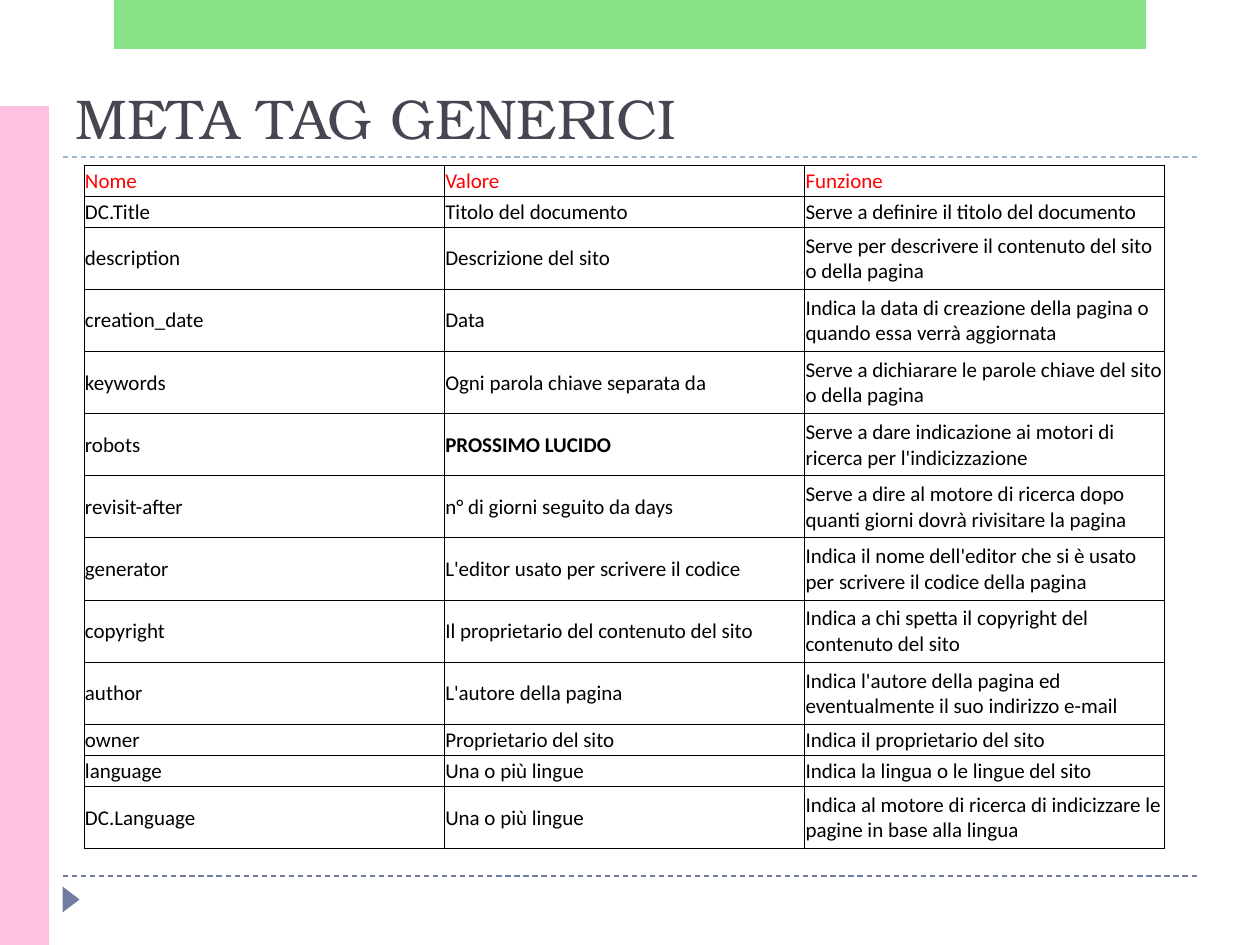
from lxml.etree import SubElement
from pptx import Presentation
from pptx.dml.color import RGBColor
from pptx.enum.dml import MSO_LINE
from pptx.enum.shapes import MSO_CONNECTOR, MSO_SHAPE
from pptx.enum.text import MSO_ANCHOR, PP_ALIGN
from pptx.oxml.ns import qn
from pptx.util import Emu, Pt

TITLE = "META TAG GENERICI"
HEADER = ("Nome", "Valore", "Funzione")
# name, value, purpose, lines of text in the row
TAGS = [
    ("DC.Title", "Titolo del documento", "Serve a definire il titolo del documento", 1),
    ("description", "Descrizione del sito",
     "Serve per descrivere il contenuto del sito o della pagina", 2),
    ("creation_date", "Data",
     "Indica la data di creazione della pagina o quando essa verrà aggiornata", 2),
    ("keywords", "Ogni parola chiave separata da",
     "Serve a dichiarare le parole chiave del sito o della pagina", 2),
    ("robots", "PROSSIMO LUCIDO",
     "Serve a dare indicazione ai motori di ricerca per l'indicizzazione", 2),
    ("revisit-after", "n° di giorni seguito da days",
     "Serve a dire al motore di ricerca dopo quanti giorni dovrà rivisitare la pagina", 2),
    ("generator", "L'editor usato per scrivere il codice",
     "Indica il nome dell'editor che si è usato per scrivere il codice della pagina", 2),
    ("copyright", "Il proprietario del contenuto del sito",
     "Indica a chi spetta il copyright del contenuto del sito", 2),
    ("author", "L'autore della pagina",
     "Indica l'autore della pagina ed eventualmente il suo indirizzo e-mail", 2),
    ("owner", "Proprietario del sito", "Indica il proprietario del sito", 1),
    ("language", "Una o più lingue", "Indica la lingua o le lingue del sito", 1),
    ("DC.Language", "Una o più lingue",
     "Indica al motore di ricerca di indicizzare le pagine in base alla lingua", 2),
]
EMPHASIS = "PROSSIMO LUCIDO"

# shape, box in px, colour, opacity in percent, rotation
DECORATIONS = [
    (MSO_SHAPE.ISOSCELES_TRIANGLE, (58, 891, 26, 17), "727CA3", 100, 90),
    (MSO_SHAPE.RECTANGLE, (0, 106, 49, 839), "FFC1E0", 100, 0),
    (MSO_SHAPE.RECTANGLE, (114, 0, 1032, 49), "62D862", 76, 0),
]
RULES = [(876, "727CA3"), (157, "9FB8CD")]  # y in px, colour
RULE_LEFT, RULE_RIGHT = 63, 1197
TITLE_BOX = (63, 69, 1134, 88)
TABLE_LEFT, TABLE_TOP, TABLE_WIDTH = 84, 165, 1081
LINE_HEIGHT = 31.1


def px(length):
    return Emu(round(length * 914400 / 126))


def rgb(colour):
    return RGBColor.from_string(colour)


def write(frame, text, *, font, size, colour, bold=False, anchor=MSO_ANCHOR.MIDDLE):
    frame.word_wrap = True
    frame.vertical_anchor = anchor
    para = frame.paragraphs[0]
    para.alignment = PP_ALIGN.LEFT
    span = para.add_run()
    span.text = text
    span.font.name = font
    span.font.size = Pt(size)
    span.font.bold = bold
    span.font.color.rgb = rgb(colour)


def add_rule(page, y, colour):
    rule = page.shapes.add_connector(
        MSO_CONNECTOR.STRAIGHT, px(RULE_LEFT), px(y), px(RULE_RIGHT), px(y))
    rule.line.color.rgb = rgb(colour)
    rule.line.width = Pt(0.75)
    rule.line.dash_style = MSO_LINE.DASH
    SubElement(rule._element.spPr, qn("a:effectLst"))


def add_decoration(page, kind, box, colour, opacity, rotation):
    shape = page.shapes.add_shape(kind, *map(px, box))
    shape.shadow.inherit = False
    shape.rotation = rotation
    shape.fill.solid()
    shape.fill.fore_color.rgb = rgb(colour)
    shape.line.fill.background()
    if opacity < 100:
        tint = shape._element.spPr.find(qn("a:solidFill"))[0]
        SubElement(tint, qn("a:alpha"), val=str(opacity * 1000))


def border(cell):
    """Draw the four edges; they must precede the fill in the cell properties."""
    props = cell._tc.get_or_add_tcPr()
    for side in ("lnL", "lnR", "lnT", "lnB"):
        edge = SubElement(props, qn("a:" + side), w=str(Pt(0.5)))
        SubElement(SubElement(edge, qn("a:solidFill")), qn("a:srgbClr"), val="000000")


def add_tag_table(page):
    rows = [(*HEADER, 1), *TAGS]
    height = LINE_HEIGHT * sum(row[-1] for row in rows)
    table = page.shapes.add_table(
        len(rows), len(HEADER), px(TABLE_LEFT), px(TABLE_TOP),
        px(TABLE_WIDTH), px(height)).table
    table.first_row = table.horz_banding = False
    for column in table.columns:
        column.width = px(TABLE_WIDTH / len(HEADER))
    for r, (*texts, lines) in enumerate(rows):
        table.rows[r].height = px(LINE_HEIGHT * lines)
        for c, text in enumerate(texts):
            cell = table.cell(r, c)
            cell.margin_left = cell.margin_right = cell.margin_top = px(1)
            cell.margin_bottom = 0
            cell.vertical_anchor = MSO_ANCHOR.MIDDLE
            border(cell)
            cell.fill.background()
            write(cell.text_frame, text, font="Calibri", size=12,
                  colour="000000" if r else "FF0000", bold=text == EMPHASIS)


def main():
    deck = Presentation()
    deck.slide_width, deck.slide_height = px(1260), px(945)
    page = deck.slides.add_slide(deck.slide_layouts[5])
    page.background.fill.solid()
    page.background.fill.fore_color.rgb = rgb("FFFFFF")
    for rule in RULES:
        add_rule(page, *rule)
    for decoration in DECORATIONS:
        add_decoration(page, *decoration)
    title = page.shapes.title
    title.left, title.top, title.width, title.height = map(px, TITLE_BOX)
    write(title.text_frame, TITLE, font="TeX Gyre Bonum", size=32,
          colour="464653", anchor=MSO_ANCHOR.BOTTOM)
    add_tag_table(page)
    deck.save("out.pptx")


if __name__ == "__main__":
    main()
